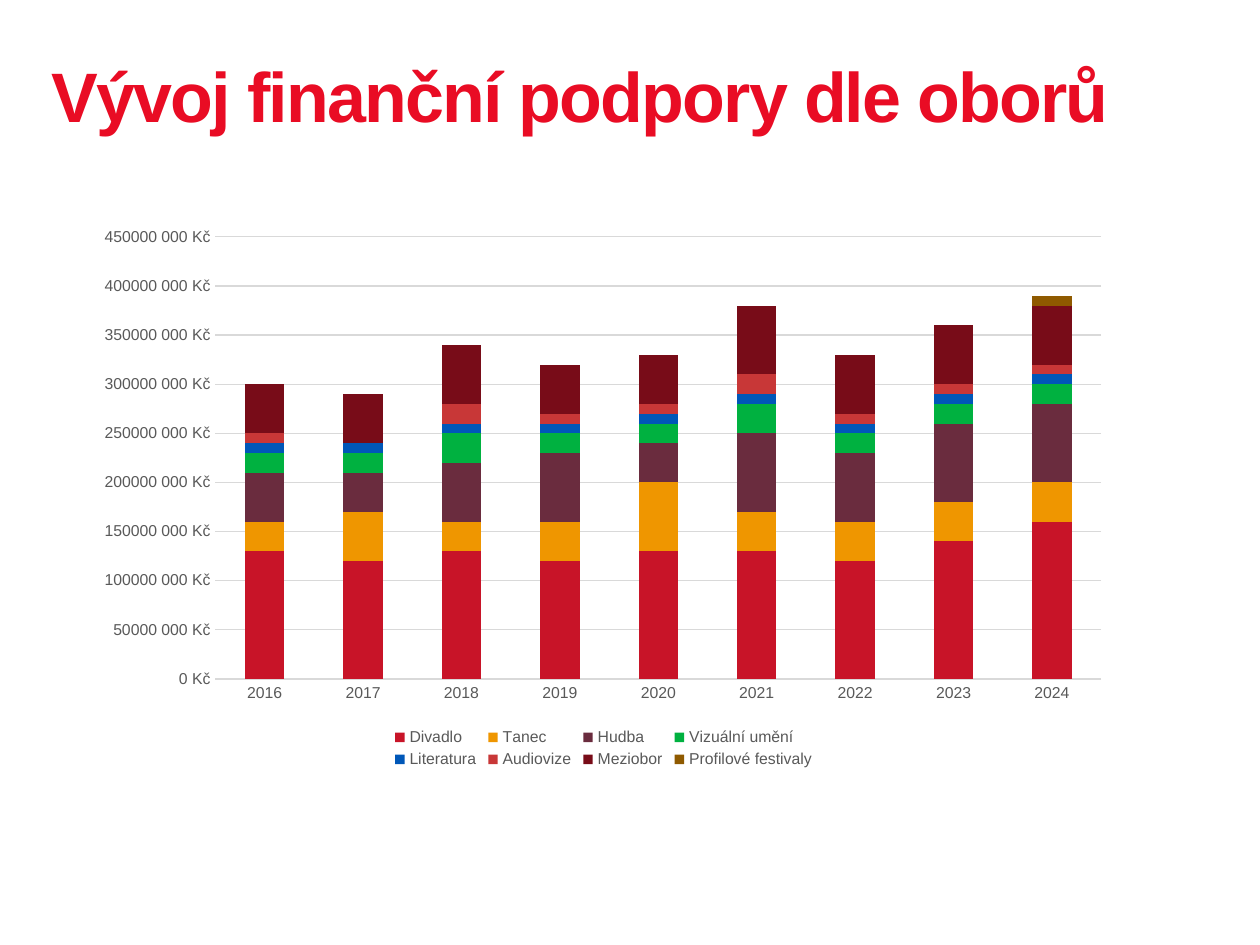
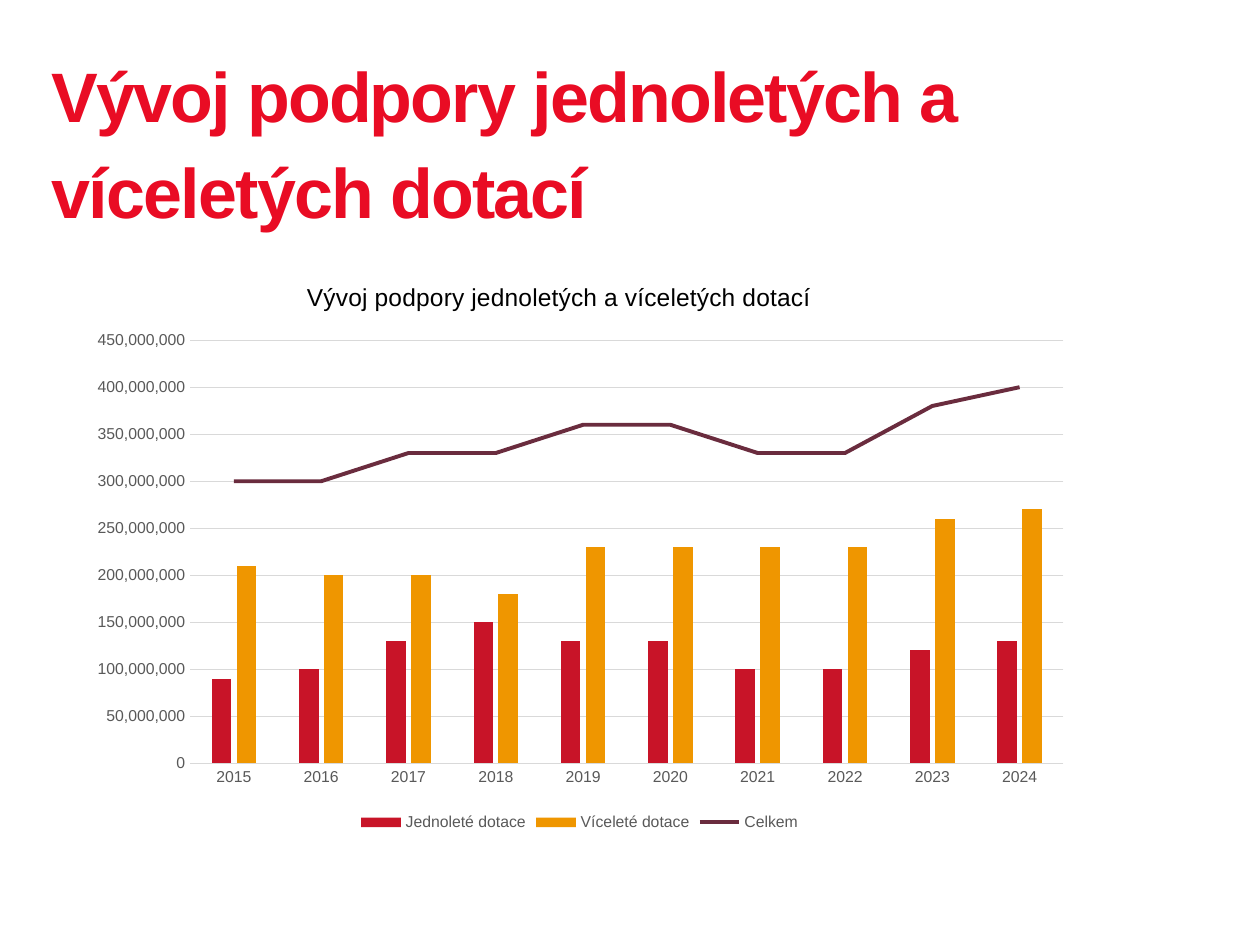
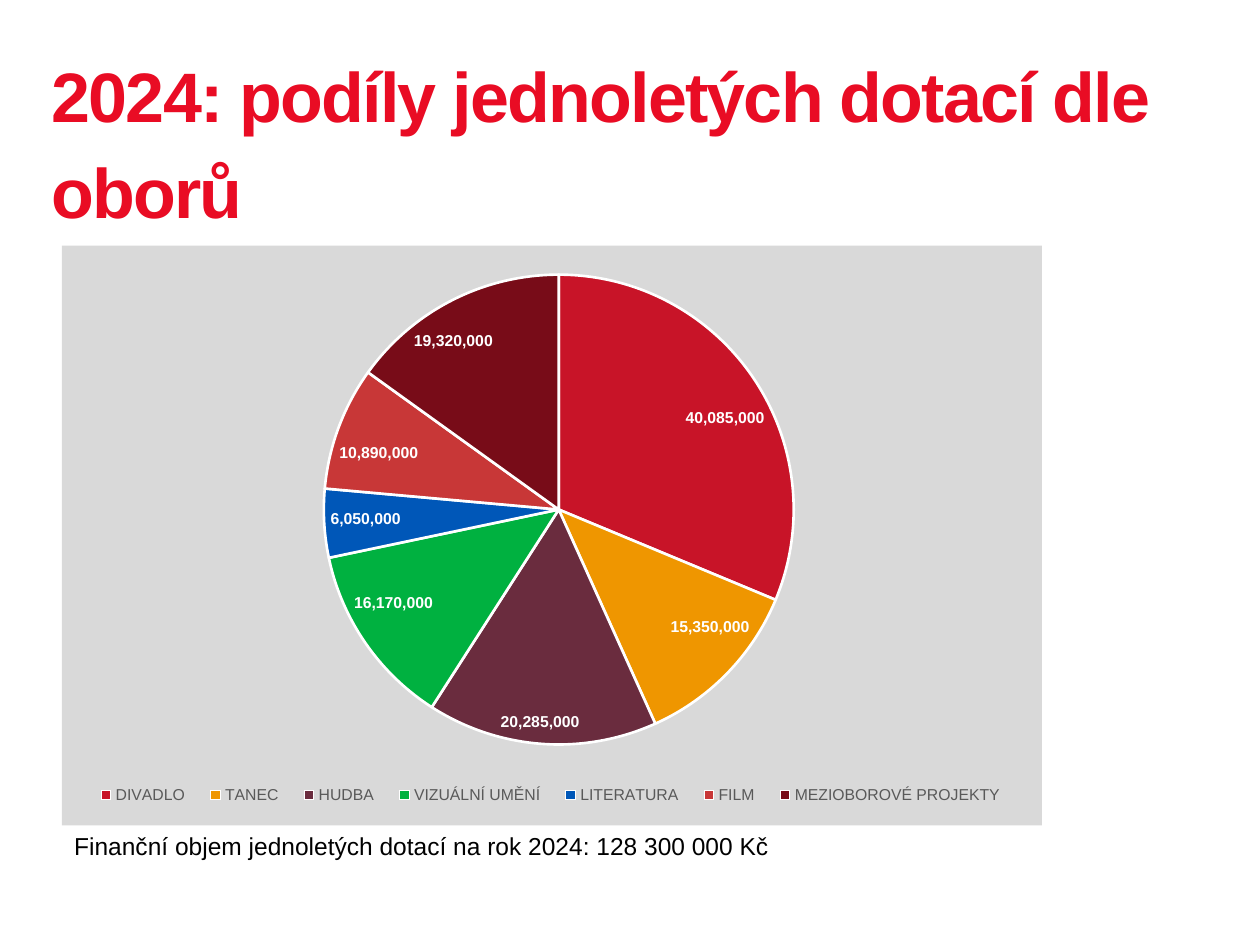
from dataclasses import dataclass

from lxml import etree
from pptx import Presentation
from pptx.chart.chart import Chart
from pptx.chart.data import CategoryChartData
from pptx.dml.color import RGBColor
from pptx.enum.chart import (
    XL_CHART_TYPE,
    XL_LABEL_POSITION,
    XL_LEGEND_POSITION,
    XL_MARKER_STYLE,
    XL_TICK_MARK,
)
from pptx.enum.text import MSO_ANCHOR, MSO_AUTO_SIZE, PP_ALIGN
from pptx.oxml.ns import qn
from pptx.presentation import Presentation as Deck
from pptx.slide import Slide
from pptx.text.text import Font
from pptx.util import Emu, Pt

STACKED = XL_CHART_TYPE.COLUMN_STACKED
CLUSTERED = XL_CHART_TYPE.COLUMN_CLUSTERED
PIE = XL_CHART_TYPE.PIE
BEST_FIT = XL_LABEL_POSITION.BEST_FIT
LEGEND_BOTTOM = XL_LEGEND_POSITION.BOTTOM
NO_MARKER = XL_MARKER_STYLE.NONE
NO_TICK = XL_TICK_MARK.NONE
TOP = MSO_ANCHOR.TOP
NO_FIT = MSO_AUTO_SIZE.NONE
LEFT = PP_ALIGN.LEFT

EMU_PER_PX = 9144
TITLE_ONLY = 5
MILLION = 1_000_000


def px(length: int) -> Emu:
    return Emu(length * EMU_PER_PX)


@dataclass(frozen=True)
class Theme:
    font: str = "Arial"
    heading: str = "E90C24"
    text: str = "000000"
    muted: str = "595959"
    grid: str = "D9D9D9"
    white: str = "FFFFFF"
    fields: tuple[str, ...] = (
        "C81428", "EF9600", "6A2C3E", "00B140",
        "0057B8", "C83737", "780C18", "8F5A00",
    )
    heading_size: int = 40
    heading_leading: int = 55
    heading_tracking: int = -100
    caption_size: int = 14
    chart_size: int = 10
    label_size: int = 9
    hairline: float = 0.75
    slice_line: float = 1.5
    total_line: float = 2.25


THEME = Theme()


@dataclass(frozen=True)
class Box:
    left: int
    top: int
    width: int
    height: int

    def emu(self) -> tuple[Emu, Emu, Emu, Emu]:
        return px(self.left), px(self.top), px(self.width), px(self.height)


@dataclass(frozen=True)
class Series:
    name: str
    values: tuple[int | None, ...]


@dataclass(frozen=True)
class ChartPlan:
    kind: XL_CHART_TYPE
    frame: Box
    plot: Box
    categories: tuple[str, ...]
    series: tuple[Series, ...]
    legend: Box | None = None


HEADING_BOX = Box(41, 32, 920, 228)
SHORT_HEADING_BOX = Box(41, 32, 914, 79)
CAPTION_BOX = Box(49, 655, 799, 34)
SUBTITLE_BOX = Box(240, 220, 400, 26)


def millions(*amounts: int | None) -> tuple[int | None, ...]:
    return tuple(None if a is None else a * MILLION for a in amounts)


FIELD_SUPPORT = ChartPlan(
    STACKED,
    Box(67, 172, 824, 442),
    Box(171, 188, 703, 351),
    tuple(str(year) for year in range(2016, 2025)),
    (
        Series("Divadlo", millions(130, 120, 130, 120, 130, 130, 120, 140, 160)),
        Series("Tanec", millions(30, 50, 30, 40, 70, 40, 40, 40, 40)),
        Series("Hudba", millions(50, 40, 60, 70, 40, 80, 70, 80, 80)),
        Series("Vizuální umění", millions(20, 20, 30, 20, 20, 30, 20, 20, 20)),
        Series("Literatura", millions(*[10] * 9)),
        Series("Audiovize", millions(10, 0, 20, 10, 10, 20, 10, 10, 10)),
        Series("Meziobor", millions(50, 50, 60, 50, 50, 70, 60, 60, 60)),
        Series("Profilové festivaly", millions(*[None] * 8, 10)),
    ),
    Box(308, 575, 342, 38),
)

GRANT_TERMS = ChartPlan(
    CLUSTERED,
    Box(61, 207, 798, 457),
    Box(151, 270, 693, 336),
    tuple(str(year) for year in range(2015, 2025)),
    (
        Series("Jednoleté dotace",
               millions(90, 100, 130, 150, 130, 130, 100, 100, 120, 130)),
        Series("Víceleté dotace",
               millions(210, 200, 200, 180, 230, 230, 230, 230, 260, 270)),
        Series("Celkem",
               millions(300, 300, 330, 330, 360, 360, 330, 330, 380, 400)),
    ),
)

FIELD_SHARES = ChartPlan(
    PIE,
    Box(49, 195, 778, 460),
    Box(257, 218, 373, 373),
    ("DIVADLO", "TANEC", "HUDBA", "VIZUÁLNÍ UMĚNÍ", "LITERATURA", "FILM",
     "MEZIOBOROVÉ PROJEKTY"),
    (
        Series("Series 1", (40085000, 15350000, 20285000, 16170000, 6050000,
                            10890000, 19320000)),
    ),
    Box(64, 621, 746, 20),
)


def rgb(color: str) -> RGBColor:
    return RGBColor.from_string(color)


def style_font(font: Font, size: int, color: str, bold: bool = False) -> None:
    font.name = THEME.font
    font.size = Pt(size)
    font.bold = bold
    font.color.rgb = rgb(color)


def add_heading_slide(deck: Deck, heading: str, box: Box = HEADING_BOX) -> Slide:
    slide = deck.slides.add_slide(deck.slide_layouts[TITLE_ONLY])
    title = slide.shapes.title
    title.left, title.top, title.width, title.height = box.emu()
    frame = title.text_frame
    frame.margin_left = frame.margin_top = 0
    frame.margin_right = frame.margin_bottom = 0
    frame.vertical_anchor = TOP
    frame.auto_size = NO_FIT
    frame.word_wrap = True
    paragraph = frame.paragraphs[0]
    paragraph.alignment = LEFT
    paragraph.line_spacing = Pt(THEME.heading_leading)
    run = paragraph.add_run()
    run.text = heading
    style_font(run.font, THEME.heading_size, THEME.heading, True)
    run.font._element.set("spc", str(THEME.heading_tracking))
    return slide


def place_part(chart: Chart, tag: str, frame: Box, box: Box) -> None:
    part = chart.element.find(f".//{qn(tag)}")
    for stale in part.findall(qn("c:layout")):
        part.remove(stale)
    layout = etree.Element(qn("c:layout"))
    manual = etree.SubElement(layout, qn("c:manualLayout"))
    settings = {"xMode": "edge", "yMode": "edge"}
    is_plot = tag == "c:plotArea"
    if is_plot:
        settings = {"layoutTarget": "inner"} | settings
    fractions = {
        "x": (box.left - frame.left) / frame.width,
        "y": (box.top - frame.top) / frame.height,
    }
    if tag != "c:title":
        fractions["w"] = box.width / frame.width
        fractions["h"] = box.height / frame.height
    settings |= {key: f"{value:.4f}" for key, value in fractions.items()}
    for key, value in settings.items():
        etree.SubElement(manual, qn(f"c:{key}")).set("val", value)
    part.insert(0 if is_plot else 1, layout)


def add_planned_chart(slide: Slide, plan: ChartPlan) -> Chart:
    data = CategoryChartData()
    data.categories = plan.categories
    for series in plan.series:
        data.add_series(series.name, series.values)
    chart = slide.shapes.add_chart(plan.kind, *plan.frame.emu(), data).chart
    style_font(chart.font, THEME.chart_size, THEME.text)
    chart.has_title = False
    chart.has_legend = True
    chart.legend.position = LEGEND_BOTTOM
    chart.legend.include_in_layout = False
    style_font(chart.legend.font, THEME.label_size, THEME.muted)
    place_part(chart, "c:plotArea", plan.frame, plan.plot)
    if plan.legend:
        place_part(chart, "c:legend", plan.frame, plan.legend)
    return chart


def style_columns(chart: Chart, number_format: str, gap: int, overlap: int) -> None:
    years, amounts = chart.category_axis, chart.value_axis
    for axis in (years, amounts):
        axis.major_tick_mark = axis.minor_tick_mark = NO_TICK
        style_font(axis.tick_labels.font, THEME.label_size, THEME.muted)
    amounts.minimum_scale = 0
    amounts.maximum_scale = 450 * MILLION
    amounts.major_unit = 50 * MILLION
    amounts.tick_labels.number_format = number_format
    amounts.tick_labels.number_format_is_linked = False
    amounts.format.line.fill.background()
    amounts.has_major_gridlines = True
    for line in (years.format.line, amounts.major_gridlines.format.line):
        line.color.rgb = rgb(THEME.grid)
        line.width = Pt(THEME.hairline)
    columns = chart.plots[0]
    columns.vary_by_categories = False
    columns.gap_width = gap
    columns.overlap = overlap
    for series, color in zip(columns.series, THEME.fields):
        series.format.fill.solid()
        series.format.fill.fore_color.rgb = rgb(color)
        series.invert_if_negative = False


def turn_last_series_into_line(chart: Chart, color: str) -> None:
    columns = chart.element.find(f".//{qn('c:barChart')}")
    total = columns.findall(qn("c:ser"))[-1]
    for tag in ("c:invertIfNegative", "c:spPr"):
        for stale in total.findall(qn(tag)):
            total.remove(stale)
    line_plot = columns.makeelement(qn("c:lineChart"), {})
    columns.addnext(line_plot)
    etree.SubElement(line_plot, qn("c:grouping")).set("val", "standard")
    etree.SubElement(line_plot, qn("c:varyColors")).set("val", "0")
    line_plot.append(total)
    etree.SubElement(line_plot, qn("c:marker")).set("val", "1")
    for axis_id in columns.findall(qn("c:axId")):
        etree.SubElement(line_plot, qn("c:axId")).set("val", axis_id.get("val"))
    series = chart.plots[1].series[0]
    series.smooth = False
    series.marker.style = NO_MARKER
    series.format.line.color.rgb = rgb(color)
    series.format.line.width = Pt(THEME.total_line)


def fill_chart_area(chart: Chart, color: str) -> None:
    area = etree.Element(qn("c:spPr"))
    fill = etree.SubElement(area, qn("a:solidFill"))
    etree.SubElement(fill, qn("a:srgbClr")).set("val", color)
    outline = etree.SubElement(area, qn("a:ln"))
    etree.SubElement(outline, qn("a:noFill"))
    chart.element.find(qn("c:chart")).addnext(area)


def style_pie(chart: Chart) -> None:
    fill_chart_area(chart, THEME.grid)
    pie = chart.plots[0]
    pie.vary_by_categories = True
    for index in range(len(FIELD_SHARES.categories)):
        field = pie.series[0].points[index].format
        field.fill.solid()
        field.fill.fore_color.rgb = rgb(THEME.fields[index])
        field.line.color.rgb = rgb(THEME.white)
        field.line.width = Pt(THEME.slice_line)
    labels = pie.series[0].data_labels
    labels.show_value = True
    labels.show_percentage = False
    labels.number_format = "#,##0"
    labels.number_format_is_linked = False
    labels.position = BEST_FIT
    style_font(labels.font, THEME.label_size, THEME.white, True)


def add_chart_title(chart: Chart, text: str, frame: Box) -> None:
    run = chart.chart_title.text_frame.paragraphs[0].add_run()
    run.text = text
    style_font(run.font, THEME.caption_size, THEME.text)
    chart.chart_title.include_in_layout = False
    place_part(chart, "c:title", frame, SUBTITLE_BOX)


def add_caption(slide: Slide, text: str) -> None:
    frame = slide.shapes.add_textbox(*CAPTION_BOX.emu()).text_frame
    frame.word_wrap = True
    run = frame.paragraphs[0].add_run()
    run.text = text
    style_font(run.font, THEME.caption_size, THEME.text)


def build_field_support(deck: Deck) -> None:
    slide = add_heading_slide(deck, "Vývoj finanční podpory dle oborů")
    chart = add_planned_chart(slide, FIELD_SUPPORT)
    style_columns(chart, '#\\ ##0\\ "Kč"', 150, 100)


def build_grant_terms(deck: Deck) -> None:
    heading = "Vývoj podpory jednoletých a víceletých dotací"
    slide = add_heading_slide(deck, heading)
    chart = add_planned_chart(slide, GRANT_TERMS)
    style_columns(chart, "#,##0", 219, -27)
    turn_last_series_into_line(chart, THEME.fields[2])
    add_chart_title(chart, heading, GRANT_TERMS.frame)


def build_field_shares(deck: Deck) -> None:
    slide = add_heading_slide(
        deck, "2024: podíly jednoletých dotací dle oborů", SHORT_HEADING_BOX
    )
    style_pie(add_planned_chart(slide, FIELD_SHARES))
    add_caption(
        slide, "Finanční objem jednoletých dotací na rok 2024: 128 300 000 Kč"
    )


def main() -> None:
    deck = Presentation()
    deck.slide_width, deck.slide_height = px(1000), px(750)
    build_field_support(deck)
    build_grant_terms(deck)
    build_field_shares(deck)
    deck.save("out.pptx")


if __name__ == "__main__":
    main()
